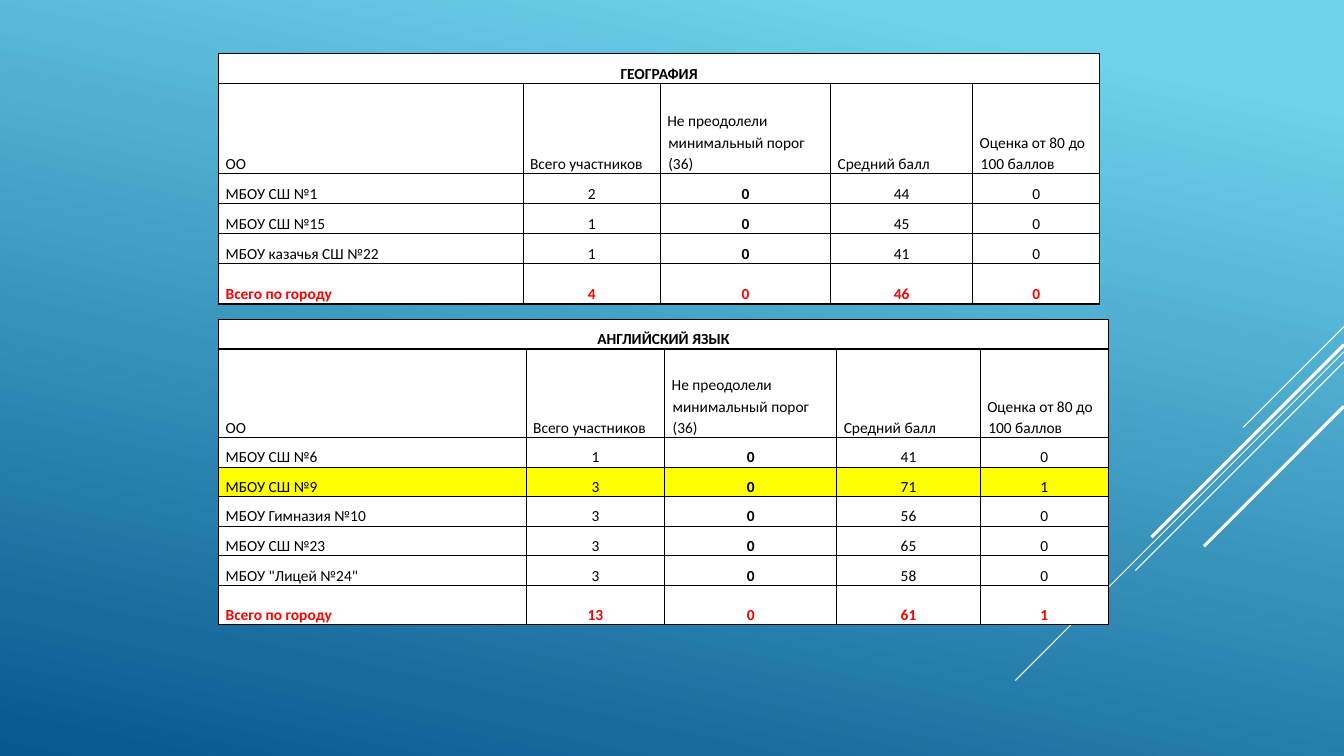
from lxml import etree
from pptx import Presentation
from pptx.dml.color import RGBColor
from pptx.enum.shapes import MSO_CONNECTOR
from pptx.enum.text import MSO_ANCHOR, PP_ALIGN
from pptx.oxml.ns import qn
from pptx.util import Pt

STRAIGHT = MSO_CONNECTOR.STRAIGHT
BOTTOM = MSO_ANCHOR.BOTTOM
LEFT, CENTER = PP_ALIGN.LEFT, PP_ALIGN.CENTER

SLIDE_WIDTH, SLIDE_HEIGHT = 960, 540
BLACK, WHITE, RED, YELLOW = "000000", "FFFFFF", "FF0000", "FFFF00"
COLUMN_WIDTHS = [217.5, 98, 121.7, 101.5, 90.7]
HEADINGS = ["ОО", "Всего участников", "Не преодолели минимальный порог (36)",
            "Средний балл", "Оценка от 80 до 100 баллов"]
FAILED_COLUMN = 2


def color(hex_code):
    return RGBColor.from_string(hex_code)


class ResultsSlide:
    font = "Calibri"
    text_size = 11
    line_spacing = 1.12
    side_margin = 5
    hanging = 0.72

    def __init__(self, slide):
        self.slide = slide

    def background(self, start, end, angle):
        fill = self.slide.background.fill
        fill.gradient()
        fill.gradient_angle = 360 - angle
        for stop, (position, hex_code) in zip(fill.gradient_stops, (start, end)):
            stop.position = position
            stop.color.rgb = color(hex_code)

    def diagonal(self, top, reach, width):
        """Line falling at 45 degrees from the right edge of the slide."""
        ray = self.slide.shapes.add_connector(
            STRAIGHT, Pt(SLIDE_WIDTH), Pt(top), Pt(SLIDE_WIDTH - reach), Pt(top + reach))
        ray.line.color.rgb = color(WHITE)
        ray.line.width = Pt(width)
        etree.SubElement(ray._element.spPr, qn("a:effectLst"))

    def borders(self, cell):
        properties = cell._tc.get_or_add_tcPr()
        for place, side in enumerate(("lnL", "lnR", "lnT", "lnB")):
            edge = etree.Element(qn(f"a:{side}"), w=str(Pt(1)))
            solid = etree.SubElement(edge, qn("a:solidFill"))
            etree.SubElement(solid, qn("a:srgbClr"), val=BLACK)
            properties.insert(place, edge)

    def cell(self, cell, text, align, bold, ink, fill):
        cell.fill.solid()
        cell.fill.fore_color.rgb = color(fill)
        self.borders(cell)
        cell.vertical_anchor = BOTTOM
        cell.margin_left = cell.margin_right = Pt(self.side_margin)
        cell.margin_top = cell.margin_bottom = 0
        paragraph = cell.text_frame.paragraphs[0]
        paragraph.alignment = align
        paragraph.line_spacing = self.line_spacing
        indents = paragraph._p.get_or_add_pPr()
        indents.set("marL", str(Pt(self.hanging)))
        indents.set("indent", str(-Pt(self.hanging)))
        if not text:
            return
        run = paragraph.add_run()
        run.text = text
        run.font.name = self.font
        run.font.size = Pt(self.text_size)
        run.font.bold = bold
        run.font.color.rgb = color(ink)

    def results_table(self, subject, schools, total, left, top, row_height,
                      scale=1, highlight=None):
        rows = [[subject, "", "", "", ""], HEADINGS, *schools,
                ["Всего по городу", *total]]
        last = len(rows) - 1
        widths = [width * scale for width in COLUMN_WIDTHS]
        # The headings take three lines, the total row a third more than a school
        heights = [row_height] * len(rows)
        heights[1] = row_height * 3
        heights[last] = row_height * 4 / 3

        table = self.slide.shapes.add_table(
            len(rows), len(widths), Pt(left), Pt(top),
            Pt(sum(widths)), Pt(sum(heights))).table
        table.first_row = table.horz_banding = False
        for column, width in zip(table.columns, widths):
            column.width = Pt(width)
        for row, height in zip(table.rows, heights):
            row.height = Pt(height)
        table.cell(0, 0).merge(table.cell(0, len(widths) - 1))

        for r, values in enumerate(rows):
            for c, value in enumerate(values):
                centered = r == 0 or (r > 1 and c > 0)
                bold = r in (0, last) or (r > 1 and c == FAILED_COLUMN)
                self.cell(table.cell(r, c), str(value),
                          CENTER if centered else LEFT, bold,
                          RED if r == last else BLACK,
                          YELLOW if values[0] == highlight else WHITE)


def main():
    presentation = Presentation()
    presentation.slide_width = Pt(SLIDE_WIDTH)
    presentation.slide_height = Pt(SLIDE_HEIGHT)
    blank_layout = presentation.slide_layouts[6]
    results = ResultsSlide(presentation.slides.add_slide(blank_layout))

    # Backdrop with diagonal rays
    results.background((0.1, "6ED2EB"), (1, "06588E"), angle=102)
    for top, reach, width in [(233.3, 72, 0.75), (251.3, 234.7, 0.75),
                              (258.5, 149, 0.75), (246.2, 137.5, 2.25),
                              (290.2, 100, 2.25)]:
        results.diagonal(top, reach, width)

    # Geography
    results.results_table(
        "ГЕОГРАФИЯ",
        [["МБОУ СШ №1", 2, 0, 44, 0],
         ["МБОУ СШ №15", 1, 0, 45, 0],
         ["МБОУ казачья СШ №22", 1, 0, 41, 0]],
        total=[4, 0, 46, 0], left=156.2, top=38, row_height=21.5)

    # English
    results.results_table(
        "АНГЛИЙСКИЙ ЯЗЫК",
        [["МБОУ СШ №6", 1, 0, 41, 0],
         ["МБОУ СШ №9", 3, 0, 71, 1],
         ["МБОУ Гимназия №10", 3, 0, 56, 0],
         ["МБОУ СШ №23", 3, 0, 65, 0],
         ["МБОУ \"Лицей №24\"", 3, 0, 58, 0]],
        total=[13, 0, 61, 1], left=156.2, top=228.2, row_height=21.1,
        scale=1.01, highlight="МБОУ СШ №9")

    presentation.save("out.pptx")


if __name__ == "__main__":
    main()
